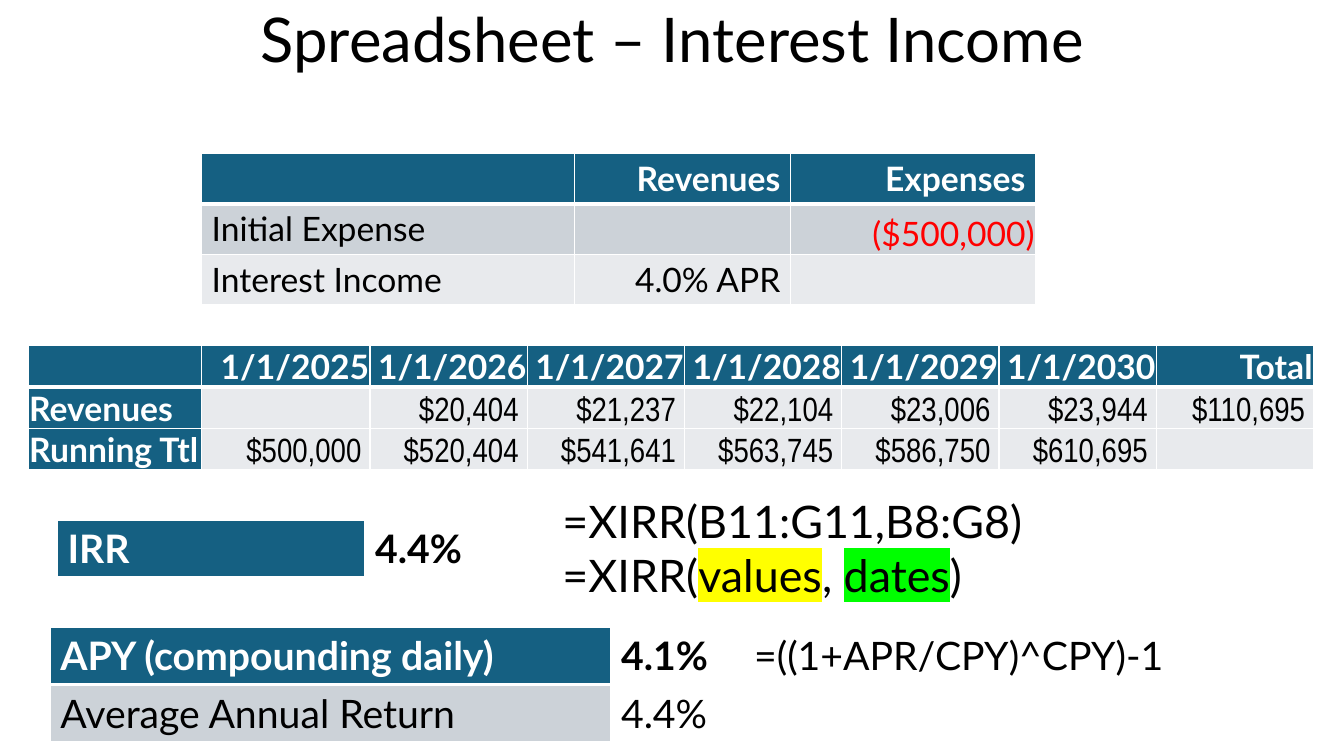
"""Build the interest income spreadsheet slide."""
from dataclasses import dataclass

from lxml import etree
from pptx import Presentation
from pptx.dml.color import RGBColor
from pptx.enum import text as t
from pptx.oxml import ns
from pptx.util import Inches, Pt


@dataclass(frozen=True)
class Theme:
    """Colours, fonts and type sizes of the slide."""
    blue: str = "156082"
    band: str = "CCD2D8"
    pale: str = "E8EAED"
    white: str = "FFFFFF"
    black: str = "000000"
    red: str = "FF0000"
    yellow: str = "FFFF00"
    green: str = "00FF00"
    font: str = "Lato"
    narrow: str = "Arial Narrow"
    title: int = 44
    code: int = 32
    large: int = 28
    small: int = 24


THEME = Theme()


@dataclass(frozen=True)
class Look:
    """Style of one table cell."""
    fill: str
    ink: str = THEME.black
    bold: bool = False
    right: bool = False
    font: str = THEME.font
    tight: bool = False


def style(para, size, ink=THEME.black, bold=False, font=THEME.font):
    """Set the font of a paragraph."""
    para.font.size = Pt(size)
    para.font.name = font
    para.font.bold = bold
    para.font.color.rgb = RGBColor.from_string(ink)


def border(cell, side, width):
    """Add a white line to one side of a cell."""
    props = cell._tc.get_or_add_tcPr()
    line = etree.SubElement(props, ns.qn(f"a:ln{side}"), w=str(Pt(width)))
    fill = etree.SubElement(line, ns.qn("a:solidFill"))
    etree.SubElement(fill, ns.qn("a:srgbClr"), val=THEME.white)


def fill_cell(cell, words, look, size, top, base):
    """Write and style one table cell."""
    for side, width in (("L", 1), ("R", 1), ("T", top), ("B", base)):
        border(cell, side, width)
    cell.fill.solid()
    cell.fill.fore_color.rgb = RGBColor.from_string(look.fill)
    if look.tight:
        cell.margin_left = cell.margin_right = cell.margin_top = Inches(0.01)
        cell.margin_bottom = 0
        cell.vertical_anchor = t.MSO_ANCHOR.BOTTOM
    para = cell.text_frame.paragraphs[0]
    para.text = words
    para.alignment = t.PP_ALIGN.RIGHT if look.right else t.PP_ALIGN.LEFT
    style(para, size, look.ink, look.bold, look.font)


def add_grid(slide, left, top, cols, high, size, rows):
    """Add a table of (words, look) cells with a heavy line under row one."""
    frame = slide.shapes.add_table(
        len(rows), len(cols), Inches(left), Inches(top),
        Inches(sum(cols)), Inches(high * len(rows)))
    grid = frame.table
    grid.first_row = grid.horz_banding = False
    for col, wide in zip(grid.columns, cols):
        col.width = Inches(wide)
    for r, row in enumerate(rows):
        grid.rows[r].height = Inches(high)
        for c, (words, look) in enumerate(row):
            fill_cell(grid.cell(r, c), words, look, size,
                      3 if r == 1 else 1, 3 if r == 0 else 1)


def add_text(slide, left, top, wide, high, size, lines):
    """Add a text box; each line is a list of (words, highlight) runs."""
    box = slide.shapes.add_textbox(
        Inches(left), Inches(top), Inches(wide), Inches(high))
    frame = box.text_frame
    frame.word_wrap = True
    for i, line in enumerate(lines):
        para = frame.add_paragraph() if i else frame.paragraphs[0]
        style(para, size)
        for words, mark in line:
            run = para.add_run()
            run.text = words
            if mark:
                props = run._r.get_or_add_rPr()
                tint = etree.SubElement(props, ns.qn("a:highlight"))
                etree.SubElement(tint, ns.qn("a:srgbClr"), val=mark)
    return frame


def add_years(slide):
    """Add the table of yearly revenues and running totals."""
    date = Look(THEME.blue, THEME.white, True, True, tight=True)
    label = Look(THEME.blue, THEME.white, True, tight=True)
    money = Look(THEME.pale, right=True, font=THEME.narrow, tight=True)
    gains = ["", "$20,404 ", "$21,237 ", "$22,104 ", "$23,006 ", "$23,944 ",
             "$110,695 "]
    sums = ["$500,000 ", "$520,404 ", "$541,641 ", "$563,745 ", "$586,750 ",
            "$610,695 ", ""]
    dates = [f"1/1/{year}" for year in range(2025, 2031)]
    rows = [[(words, date) for words in ["", *dates, "Total"]]]
    for name, cells in (("Revenues", gains), ("Running Ttl", sums)):
        rows.append([(name, label), *((words, money) for words in cells)])
    add_grid(slide, 0.28, 3.43, [1.72, 1.67] + [1.56] * 6, 0.41,
             THEME.small, rows)


def add_terms(slide):
    """Add the table of initial expense and interest rate."""
    head = Look(THEME.blue, THEME.white, True, True)
    band, pale = Look(THEME.band), Look(THEME.pale)
    loss = Look(THEME.band, THEME.red, right=True, tight=True)
    rate = Look(THEME.pale, right=True)
    add_grid(slide, 2, 1.52, [3.7, 2.14, 2.43], 0.5, THEME.small, [
        [("", head), ("Revenues", head), ("Expenses", head)],
        [("Initial Expense", band), ("", band), ("($500,000)", loss)],
        [("Interest Income", pale), ("4.0% APR", rate), ("", pale)]])


def add_rates(slide):
    """Add the yield and return tables."""
    head = Look(THEME.blue, THEME.white, True)
    strong, plain = Look(THEME.white, bold=True), Look(THEME.white)
    add_grid(slide, 0.5, 6.22, [5.56, 1.32, 5.51], 0.57, THEME.large, [
        [("APY (compounding daily)", head), ("4.1%", strong),
         ("=((1+APR/CPY)^CPY)-1", plain)],
        [("Average Annual Return", Look(THEME.band)), ("4.4%", plain),
         ("", plain)]])
    add_grid(slide, 0.57, 5.16, [3.05, 3.05], 0.57, THEME.large,
             [[("IRR", head), ("4.4%", strong)]])


def main():
    """Build and save the slide."""
    deck = Presentation()
    deck.slide_width, deck.slide_height = Inches(13.33), Inches(7.5)
    slide = deck.slides.add_slide(deck.slide_layouts[6])
    add_years(slide)
    add_terms(slide)
    add_rates(slide)
    title = add_text(slide, 0.92, 0, 11.5, 0.85, THEME.title,
                     [[("Spreadsheet – Interest Income", None)]])
    title.vertical_anchor = t.MSO_ANCHOR.MIDDLE
    title.paragraphs[0].alignment = t.PP_ALIGN.CENTER
    title.paragraphs[0].line_spacing = 0.9
    add_text(slide, 5.48, 4.85, 6.67, 1.18, THEME.code, [
        [("=XIRR(B11:G11,B8:G8)", None)],
        [("=XIRR(", None), ("values", THEME.yellow), (", ", None),
         ("dates", THEME.green), (")", None)]])
    deck.save("out.pptx")


if __name__ == "__main__":
    main()
